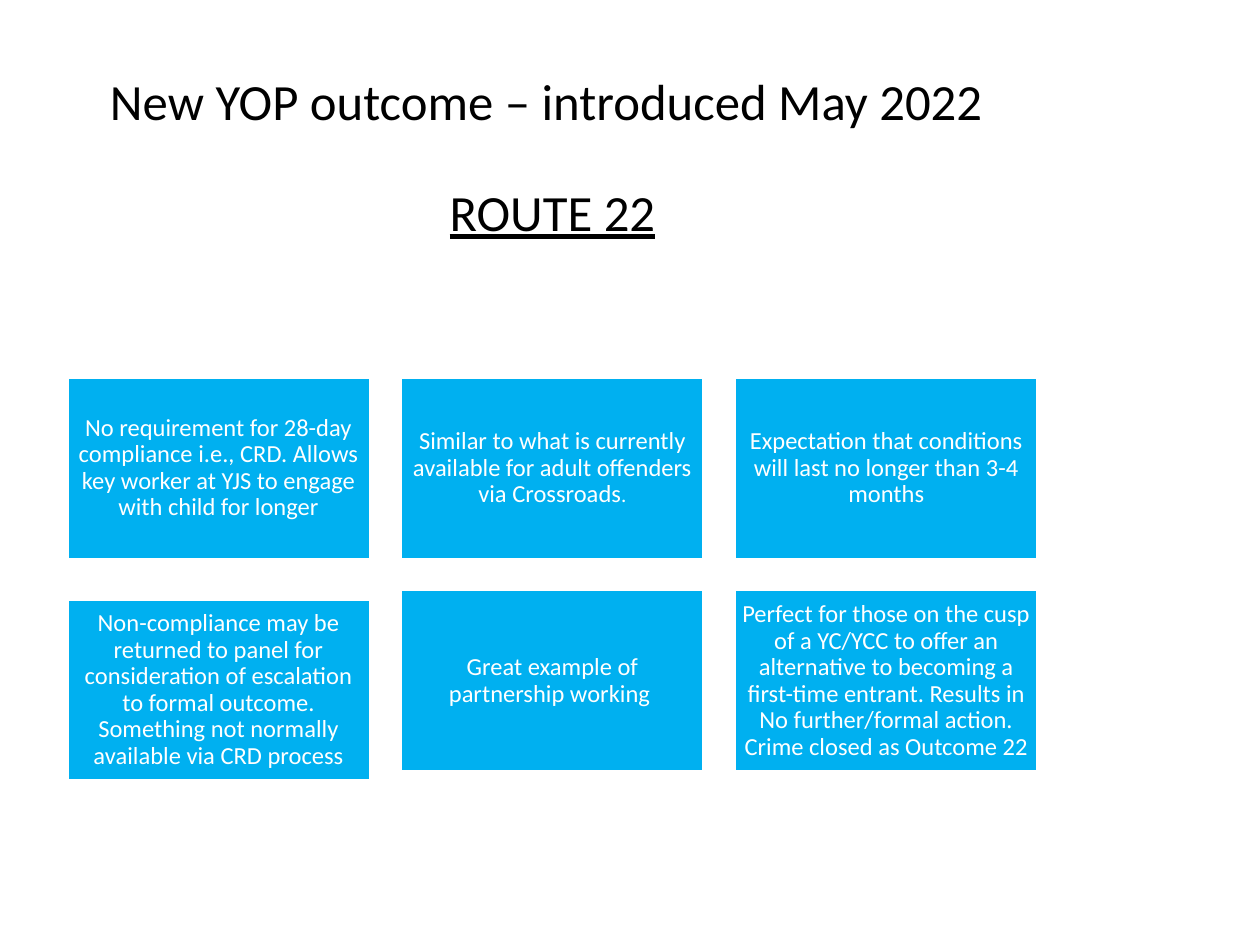
from pptx import Presentation
from pptx.dml.color import RGBColor
from pptx.enum.shapes import MSO_SHAPE
from pptx.enum.text import MSO_ANCHOR, MSO_AUTO_SIZE, PP_ALIGN
from pptx.util import Pt

RECTANGLE = MSO_SHAPE.RECTANGLE
MIDDLE = MSO_ANCHOR.MIDDLE
CENTER = PP_ALIGN.CENTER
NO_AUTOFIT = MSO_AUTO_SIZE.NONE
TITLE_ONLY = 5

FONT = "Calibri"
COLORS = {"page": "FFFFFF", "title": "000000", "card": "00B0F0", "card_text": "FFFFFF"}

# Each paragraph is a list of (text, size) spans
CARDS = [
    [("No requirement for 28-day compliance i.e., CRD. Allows key worker at YJS "
      "to engage with child for longer", 14)],
    [("Similar to what is currently available for adult offenders via Crossroads", 14),
     (".", 12)],
    [("Expectation that conditions will last no longer than 3-4 months", 14)],
    [("Non-compliance may be returned to panel for consideration of escalation to "
      "formal outcome. Something not normally available via CRD process", 14)],
    [("Great example of partnership working ", 14)],
    [("Perfect for those on the cusp of a YC/YCC to offer an alternative to becoming "
      "a first-time entrant. Results in No further/formal action. Crime closed as "
      "Outcome 22", 14)],
]


def color(name):
    return RGBColor.from_string(COLORS[name])


def write(para, spans, *, ink, underline=None, space_before=0):
    """Fill a centred paragraph with (text, size) spans."""
    para.alignment = CENTER
    para.line_spacing = 0.9
    para.space_before = Pt(space_before)
    para.space_after = Pt(0)
    for text, size in spans:
        span = para.add_run()
        span.text = text
        span.font.name = FONT
        span.font.size = Pt(size)
        span.font.underline = underline
        span.font.color.rgb = color(ink)


def add_title(page, left, top, width, height):
    box = page.shapes.title
    box.left, box.top, box.width, box.height = Pt(left), Pt(top), Pt(width), Pt(height)
    frame = box.text_frame
    frame.word_wrap = True
    frame.auto_size = NO_AUTOFIT
    frame.vertical_anchor = MIDDLE
    write(frame.paragraphs[0], [("New YOP outcome – introduced May 2022 ", 29)], ink="title")
    write(frame.add_paragraph(), [("ROUTE 22", 29)], ink="title",
          underline=True, space_before=32)


def add_card(page, spans, left, top, width, height):
    box = page.shapes.add_shape(RECTANGLE, Pt(left), Pt(top), Pt(width), Pt(height))
    box.shadow.inherit = False
    box.fill.solid()
    box.fill.fore_color.rgb = color("card")
    box.line.color.rgb = color("page")
    box.line.width = Pt(2)
    frame = box.text_frame
    frame.word_wrap = True
    frame.vertical_anchor = MIDDLE
    frame.margin_left = frame.margin_right = Pt(4.2)
    frame.margin_top = frame.margin_bottom = Pt(4.2)
    write(frame.paragraphs[0], spans, ink="card_text")


def add_cards(page, left, top, width, height, columns=3, gap=17.35):
    card_width = (width - gap * (columns - 1)) / columns
    card_height = (height - gap) / 2
    for index, spans in enumerate(CARDS):
        row, column = divmod(index, columns)
        # The first card of the second row sits slightly lower
        drop = 5.2 if (row, column) == (1, 0) else 0
        add_card(page, spans, left + column * (card_width + gap),
                 top + row * (card_height + gap) + drop, card_width, card_height)


def main():
    deck = Presentation()
    deck.slide_width, deck.slide_height = Pt(720), Pt(540)
    page = deck.slides.add_slide(deck.slide_layouts[TITLE_ONLY])
    page.background.fill.solid()
    page.background.fill.fore_color.rgb = color("page")

    add_title(page, left=38.2, top=36, width=555, height=110)
    add_cards(page, left=38.2, top=215.4, width=555, height=225.8)
    deck.save("out.pptx")


if __name__ == "__main__":
    main()
